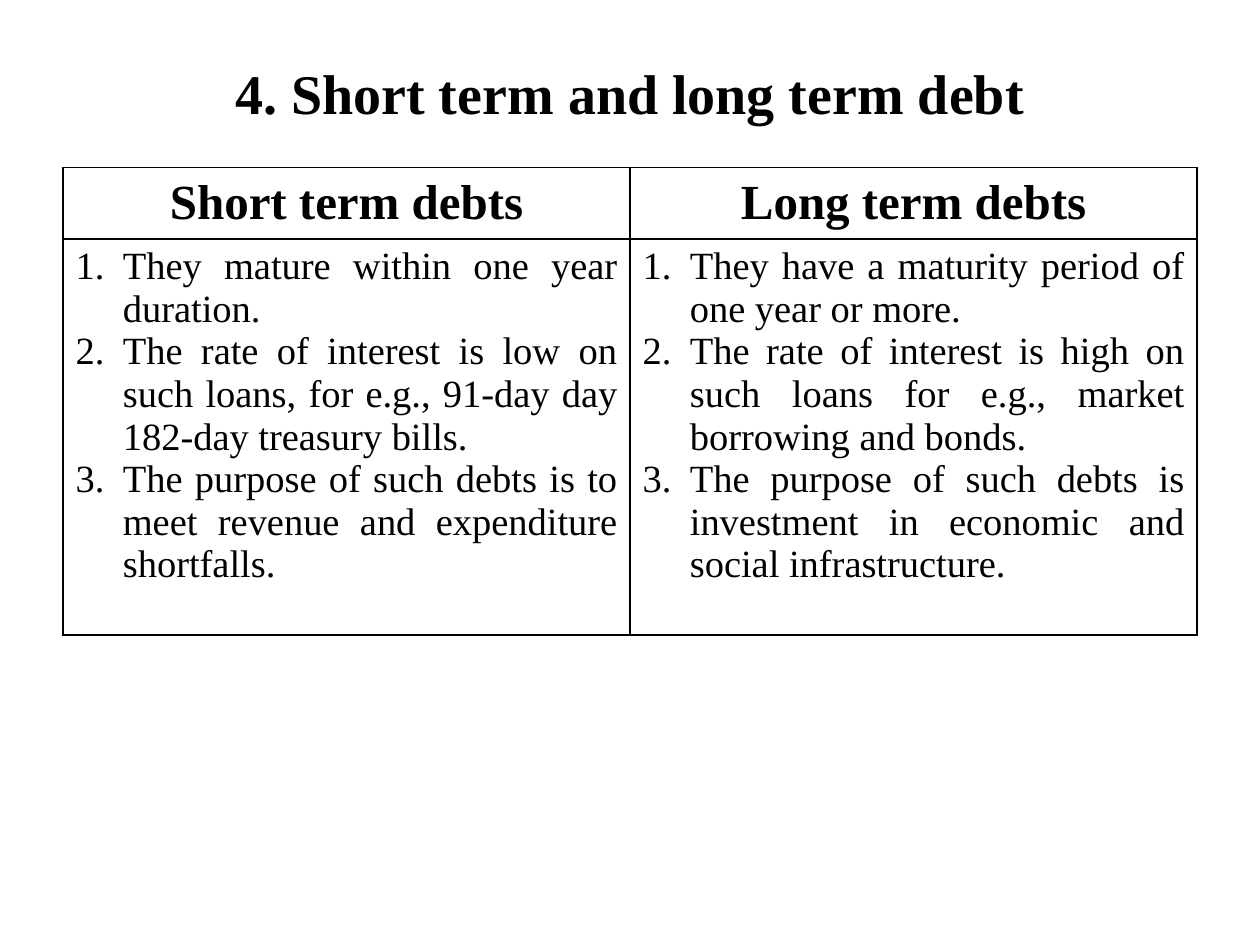
from lxml.etree import SubElement
from pptx import Presentation
from pptx.dml.color import RGBColor
from pptx.enum.text import MSO_ANCHOR, PP_ALIGN
from pptx.oxml import parse_xml
from pptx.oxml.ns import nsdecls, qn
from pptx.util import Pt

BLACK = RGBColor(0, 0, 0)
WHITE = RGBColor(255, 255, 255)
FACE = "Times New Roman"
LEFT, WIDTH = 36, 648
HEAD, BODY = 38.2, 226.3
INDENT = 27

DEBTS = {
    "Short term debts": [
        "They mature within one year duration.",
        "The rate of interest is low on such loans, for e.g., 91-day day 182-day treasury bills.",
        "The purpose of such debts is to meet revenue and expenditure shortfalls.",
    ],
    "Long term debts": [
        "They have a maturity period of one year or more.",
        "The rate of interest is high on such loans for e.g., market borrowing and bonds.",
        "The purpose of such debts is investment in economic and social infrastructure.",
    ],
}


def style(para, size, bold, align):
    para.alignment = align
    font = para.font
    font.name, font.size, font.bold = FACE, Pt(size), bold
    font.color.rgb = BLACK


def number(para):
    """Give the paragraph a hanging automatic number."""
    props = para._p.get_or_add_pPr()
    props.set("marL", str(Pt(INDENT)))
    props.set("indent", str(-Pt(INDENT)))
    mark = SubElement(props, qn("a:buAutoNum"), type="arabicPeriod")
    props.insert(0, mark)


def border(cell):
    props = cell._tc.get_or_add_tcPr()
    for spot, side in enumerate(("lnL", "lnR", "lnT", "lnB")):
        props.insert(spot, parse_xml(
            f'<a:{side} {nsdecls("a")} w="{Pt(1)}"><a:solidFill>'
            f'<a:srgbClr val="{BLACK}"/></a:solidFill></a:{side}>'))


def add_title(slide, text):
    box = slide.shapes.add_textbox(Pt(LEFT), Pt(21.6), Pt(WIDTH), Pt(62.6))
    frame = box.text_frame
    frame.word_wrap = True
    frame.vertical_anchor = MSO_ANCHOR.MIDDLE
    frame.text = text
    style(frame.paragraphs[0], 32, True, PP_ALIGN.CENTER)


def fill_cell(cell, lines, size, bold, align):
    cell.fill.solid()
    cell.fill.fore_color.rgb = WHITE
    border(cell)
    cell.text_frame.text = "\n".join(lines)
    for para in cell.text_frame.paragraphs:
        style(para, size, bold, align)


def add_debts(slide):
    table = slide.shapes.add_table(
        2, len(DEBTS), Pt(LEFT), Pt(95.76), Pt(WIDTH), Pt(HEAD + BODY)).table
    table.first_row = table.horz_banding = False
    for row, height in zip(table.rows, (HEAD, BODY)):
        row.height = Pt(height)
    for col, (name, points) in enumerate(DEBTS.items()):
        head, body = table.cell(0, col), table.cell(1, col)
        fill_cell(head, [name], 28, True, PP_ALIGN.CENTER)
        head.vertical_anchor = MSO_ANCHOR.MIDDLE
        fill_cell(body, points, 22, False, PP_ALIGN.JUSTIFY)
        for para in body.text_frame.paragraphs:
            number(para)


def main():
    deck = Presentation()
    deck.slide_width, deck.slide_height = Pt(720), Pt(540)
    slide = deck.slides.add_slide(deck.slide_layouts[6])
    add_title(slide, "4. Short term and long term debt")
    add_debts(slide)
    deck.save("out.pptx")


if __name__ == "__main__":
    main()
